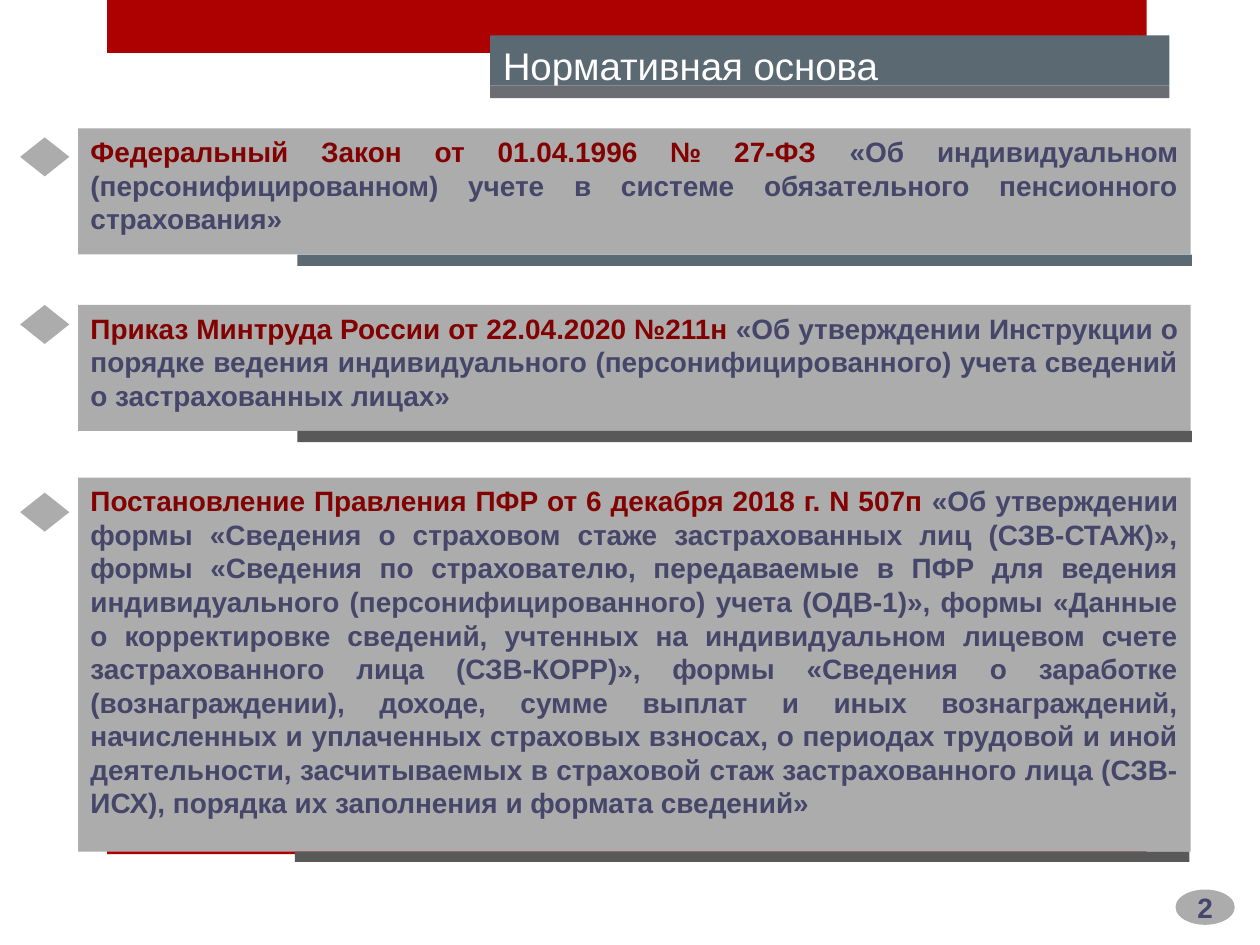
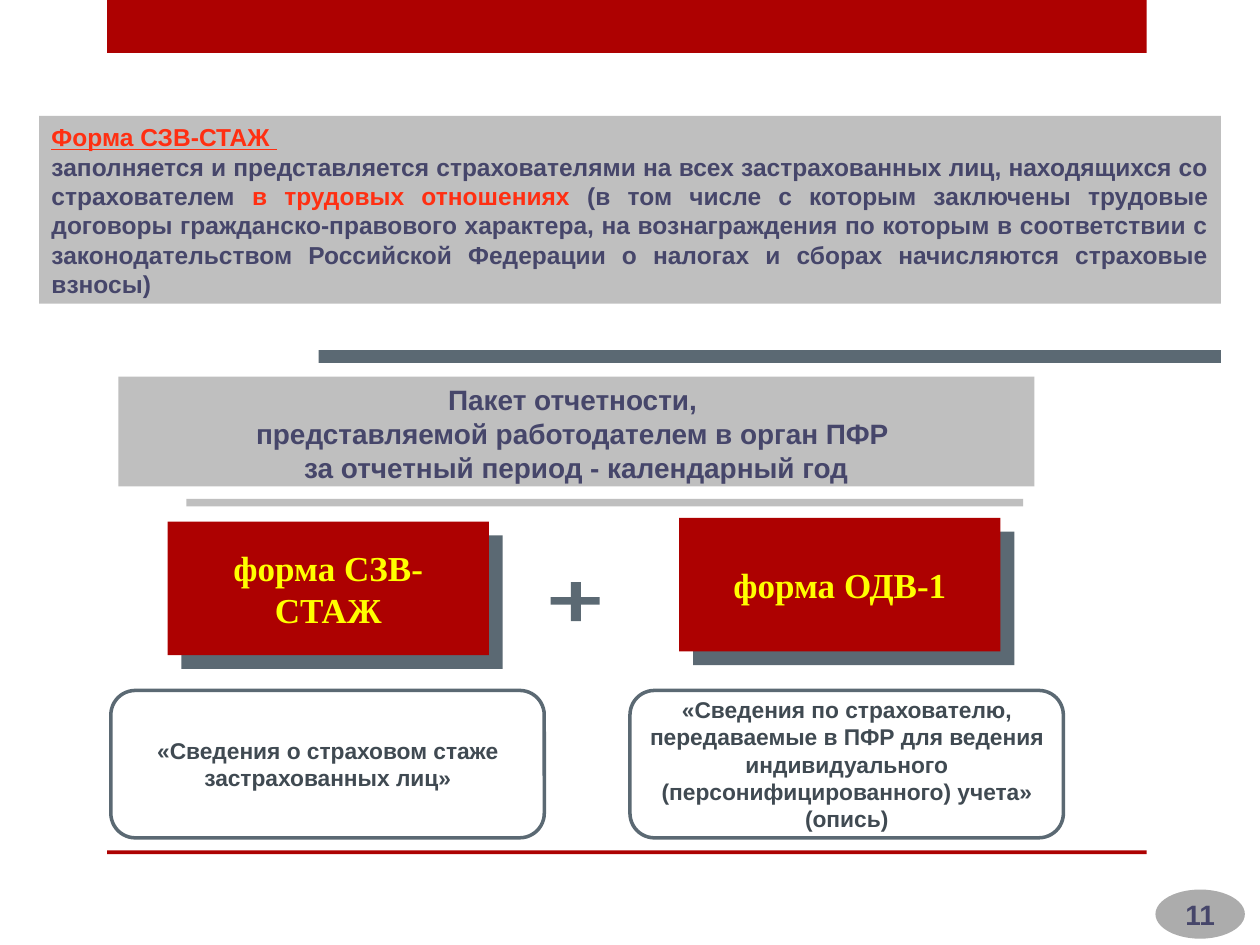
from pptx import Presentation
from pptx.dml.color import RGBColor
from pptx.enum import shapes, text
from pptx.util import Inches, Pt

RED = RGBColor(0xAD, 0x01, 0x01)
DARK_RED = RGBColor(0x82, 0x01, 0x01)
BRIGHT_RED = RGBColor(0xFF, 0x2F, 0x12)
YELLOW = RGBColor(0xFF, 0xFF, 0x00)
WHITE = RGBColor(0xFF, 0xFF, 0xFF)
SLATE = RGBColor(0x5B, 0x69, 0x73)
DARK_SLATE = RGBColor(0x40, 0x4A, 0x52)
TITLE_STRIP = RGBColor(0x6C, 0x6C, 0x73)
DARK_GRAY = RGBColor(0x59, 0x59, 0x59)
GRAY = RGBColor(0xAC, 0xAC, 0xAC)
LIGHT_GRAY = RGBColor(0xBF, 0xBF, 0xBF)
INDIGO = RGBColor(0x46, 0x46, 0x6A)

SHAPE = shapes.MSO_SHAPE
CENTER, JUSTIFY = text.PP_ALIGN.CENTER, text.PP_ALIGN.JUSTIFY
TOP, MIDDLE = text.MSO_ANCHOR.TOP, text.MSO_ANCHOR.MIDDLE

TITLE = "Нормативная основа"

# Document, its subject, card top, card height, bar left, bar height, bar colour, diamond top
REGULATIONS = [
    ("Федеральный Закон от 01.04.1996 № 27-ФЗ ",
     "«Об индивидуальном (персонифицированном) учете в системе обязательного "
     "пенсионного страхования»",
     1.02, 1, 2.36, 0.09, SLATE, 1.09),
    ("Приказ Минтруда России от 22.04.2020 №211н ",
     "«Об утверждении Инструкции о порядке ведения индивидуального "
     "(персонифицированного) учета сведений о застрахованных лицах»",
     2.42, 1, 2.36, 0.09, DARK_GRAY, 2.42),
    ("Постановление Правления ПФР от 6 декабря 2018 г. N 507п ",
     "«Об утверждении формы «Сведения о страховом стаже застрахованных лиц (СЗВ-СТАЖ)», "
     "формы «Сведения по страхователю, передаваемые в ПФР для ведения индивидуального "
     "(персонифицированного) учета (ОДВ-1)», формы «Данные о корректировке сведений, "
     "учтенных на индивидуальном лицевом счете застрахованного лица (СЗВ-КОРР)», формы "
     "«Сведения о заработке (вознаграждении), доходе, сумме выплат и иных вознаграждений, "
     "начисленных и уплаченных страховых взносах, о периодах трудовой и иной деятельности, "
     "засчитываемых в страховой стаж застрахованного лица (СЗВ-ИСХ), порядка их заполнения "
     "и формата сведений»",
     3.79, 2.97, 2.34, 0.08, DARK_GRAY, 3.91),
]

# Paragraphs of (text, colour) runs
FORM_RULES = [
    [("Форма СЗВ-СТАЖ ", BRIGHT_RED)],
    [("заполняется и представляется страхователями на всех застрахованных лиц, "
      "находящихся со страхователем ", INDIGO),
     ("в трудовых отношениях ", BRIGHT_RED),
     ("(в том числе с которым заключены трудовые договоры гражданско-правового характера, "
      "на вознаграждения по которым в соответствии с законодательством Российской Федерации "
      "о налогах и сборах начисляются страховые взносы)", INDIGO)],
]
PACKAGE = [
    [("Пакет отчетности, ", INDIGO)],
    [("представляемой работодателем в орган ПФР ", INDIGO)],
    [("за отчетный период - календарный год", INDIGO)],
]
# Form name, block left and top, description, description left
FORMS = [
    ("форма СЗВ-СТАЖ", 1.33, 4.14,
     "«Сведения о страховом стаже застрахованных лиц»", 0.88),
    ("форма ОДВ-1", 5.39, 4.11,
     "«Сведения по страхователю, передаваемые в ПФР для ведения индивидуального "
     "(персонифицированного) учета» (опись)", 5),
]


def write(shape, paragraphs, size, align=CENTER, anchor=MIDDLE, font="Arial", bold=True):
    frame = shape.text_frame
    frame.word_wrap = True
    frame.auto_size = text.MSO_AUTO_SIZE.NONE
    frame.vertical_anchor = anchor
    for index, runs in enumerate(paragraphs):
        paragraph = frame.add_paragraph() if index else frame.paragraphs[0]
        paragraph.alignment = align
        for content, color in runs:
            run = paragraph.add_run()
            run.text = content
            run.font.name = font
            run.font.size = Pt(size)
            run.font.bold = bold
            run.font.color.rgb = color


def add_box(slide, left, top, width, height, fill=None, kind=SHAPE.RECTANGLE):
    shape = slide.shapes.add_shape(
        kind, Inches(left), Inches(top), Inches(width), Inches(height))
    shape.shadow.inherit = False
    shape.line.fill.background()
    if fill is None:
        shape.fill.background()
    else:
        shape.fill.solid()
        shape.fill.fore_color.rgb = fill
    return shape


def add_slide(presentation, layout_index):
    """Add a slide with the red band on top and the red rule at the bottom."""
    slide = presentation.slides.add_slide(presentation.slide_layouts[layout_index])
    for top, height in ((0, 0.42), (6.75, 0.03)):
        add_box(slide, 0.85, top, 8.25, height, RED)
    return slide


def add_page_number(slide, number, left, width, height):
    badge = add_box(slide, left, 7.06, width, height, GRAY, SHAPE.OVAL)
    write(badge, [[(number, INDIGO)]], 16)


def place_title(slide):
    title = slide.shapes.title
    title.left, title.top = Inches(3.89), Inches(0.28)
    title.width, title.height = Inches(5.39), Inches(0.4)
    title.fill.solid()
    title.fill.fore_color.rgb = SLATE
    write(title, [[(TITLE, WHITE)]], 22, text.PP_ALIGN.LEFT, TOP, bold=False)
    slide.shapes.element.append(title.element)  # bring in front of the red band
    add_box(slide, 3.89, 0.68, 5.39, 0.1, TITLE_STRIP)


def build_regulations(presentation):
    slide = add_slide(presentation, 5)
    place_title(slide)
    add_page_number(slide, "2", 9.33, 0.47, 0.28)
    for (document, subject, top, height, bar_left, bar_height,
         bar_color, diamond_top) in REGULATIONS:
        card = add_box(slide, 0.62, top, 8.83, height, GRAY)
        write(card, [[(document, DARK_RED), (subject, INDIGO)]], 16, JUSTIFY, TOP)
        add_box(slide, bar_left, top + height, 7.1, bar_height, bar_color)
        add_box(slide, 0.16, diamond_top, 0.39, 0.31, GRAY, SHAPE.DIAMOND)


def build_forms(presentation):
    slide = add_slide(presentation, 6)

    rules = add_box(slide, 0.31, 0.92, 9.38, 1.49, LIGHT_GRAY)
    write(rules, FORM_RULES, 14, JUSTIFY, TOP)
    rules.text_frame.paragraphs[0].runs[0].font.underline = True
    add_box(slide, 2.53, 2.78, 7.16, 0.1, SLATE)

    package = add_box(slide, 0.94, 2.99, 7.27, 0.87, LIGHT_GRAY)
    write(package, PACKAGE, 16, anchor=TOP)
    add_box(slide, 1.48, 3.96, 6.64, 0.06, LIGHT_GRAY)

    for name, left, top, description, description_left in FORMS:
        add_box(slide, left + 0.11, top + 0.11, 2.55, 1.06, SLATE)
        block = add_box(slide, left, top, 2.55, 1.06, RED)
        write(block, [[(name, YELLOW)]], 20, font="Times New Roman")
        outline = add_box(slide, description_left, 5.48, 3.44, 1.17,
                          kind=SHAPE.ROUNDED_RECTANGLE)
        outline.line.color.rgb = SLATE
        outline.line.width = Pt(2)
        write(outline, [[(description, DARK_SLATE)]], 13)

    # Plus sign between the two forms
    add_box(slide, 4.53, 4.62, 0.08, 0.31, SLATE)
    add_box(slide, 4.37, 4.74, 0.39, 0.06, SLATE)
    add_page_number(slide, "11", 9.17, 0.71, 0.39)


def main():
    presentation = Presentation()
    presentation.slide_width, presentation.slide_height = Inches(10), Inches(7.5)
    build_regulations(presentation)
    build_forms(presentation)
    presentation.save("out.pptx")


if __name__ == "__main__":
    main()
